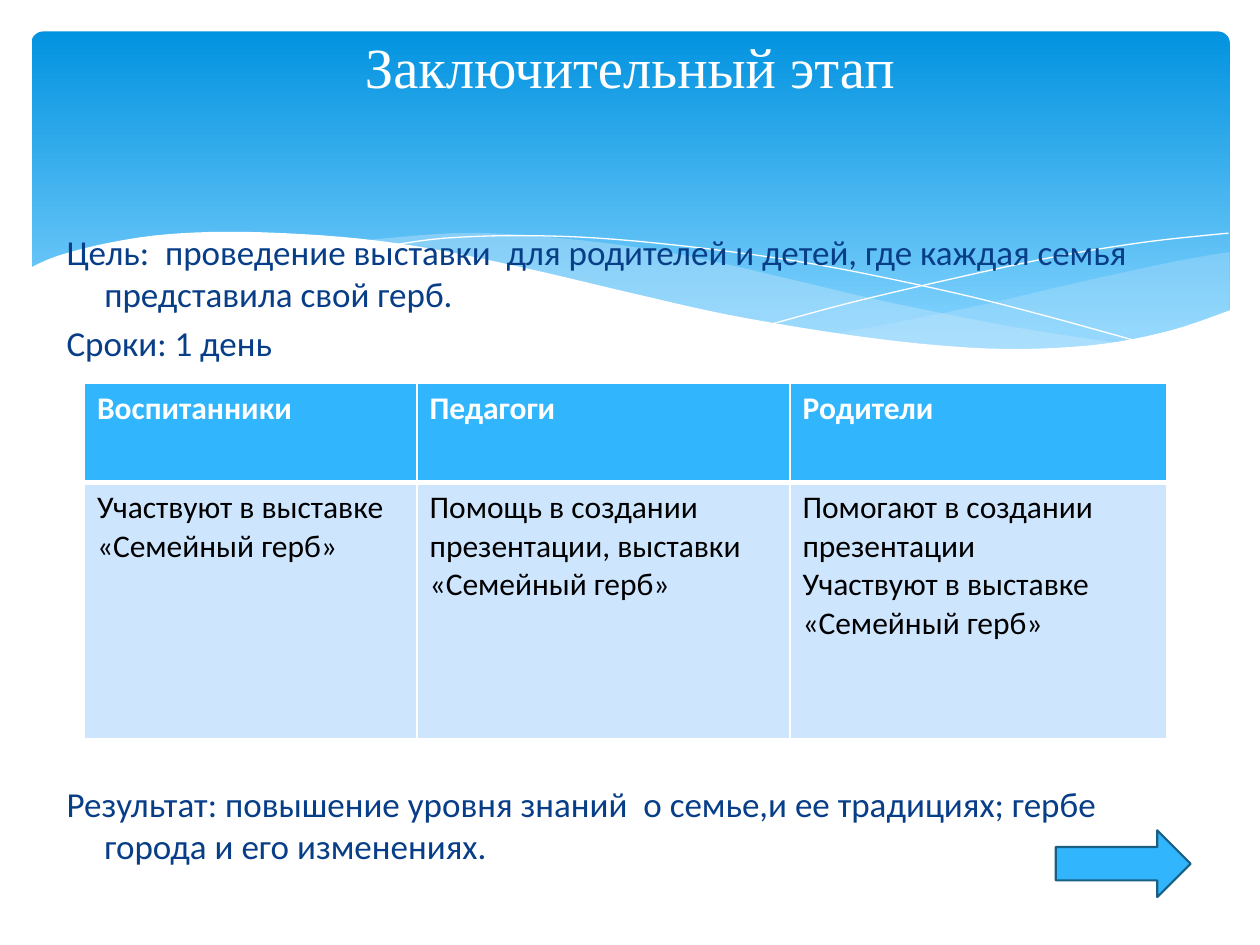
from lxml.etree import SubElement
from pptx import Presentation
from pptx.dml.color import RGBColor
from pptx.enum.shapes import MSO_SHAPE
from pptx.enum.text import MSO_ANCHOR, PP_ALIGN
from pptx.oxml.ns import qn
from pptx.util import Inches, Pt

COLORS = {
    "white": "FFFFFF", "black": "000000", "navy": "073E87",
    "sky_top": "0293E0", "sky_bottom": "83D3FE", "wave": "C6E7FC",
    "header": "31B6FD", "cell": "CEE5FE", "arrow_line": "195F84",
}

# Wave edges as key points, in inches
RIGHT_TOP = [(9.76, 2), (9.35, 2.07), (8.61, 2.23), (7.79, 2.42), (7.06, 2.57), (6.61, 2.65)]
RIGHT_BOTTOM = [(6.61, 2.65), (7.05, 2.71), (7.57, 2.76), (8.14, 2.78), (8.63, 2.75),
                (9.05, 2.69), (9.42, 2.59), (9.76, 2.47)]
MIDDLE_TOP = [(8.93, 2.73), (8.07, 2.6), (7.06, 2.4), (6.29, 2.22), (5.55, 2.05),
              (4.89, 1.94), (4.2, 1.87), (3.61, 1.85), (2.86, 1.91)]
MIDDLE_BOTTOM = [(2.86, 1.91), (3.62, 2.03), (4.49, 2.22), (5.3, 2.4), (6.18, 2.58),
                 (6.95, 2.7), (7.61, 2.77), (8.28, 2.78), (8.93, 2.73)]
FALLING_LINE = [(3.09, 1.95), (3.53, 1.89), (4.16, 1.87), (4.89, 1.9), (5.82, 2),
                (6.65, 2.13), (7.6, 2.33), (8.31, 2.51), (9.07, 2.72)]
RISING_LINE = [(6.13, 2.57), (6.72, 2.41), (7.48, 2.23), (8.36, 2.04), (9.1, 1.92), (9.75, 1.85)]
FRONT_EDGE = [(9.77, 2.46), (9.3, 2.62), (8.75, 2.73), (8.09, 2.77), (7.44, 2.74),
              (6.68, 2.65), (5.79, 2.5), (5.03, 2.33), (4.18, 2.13), (3.4, 1.97),
              (2.71, 1.88), (1.93, 1.84), (1.32, 1.86), (0.85, 1.93), (0.46, 2.03), (0.23, 2.13)]


def smooth(points, steps=5):
    """Sample a Catmull-Rom curve through the points."""
    padded = [points[0], *points, points[-1]]
    curve = []
    for a, b, c, d in zip(padded, padded[1:], padded[2:], padded[3:]):
        for i in range(steps):
            t = i / steps
            curve.append(tuple(
                (2 * q + (r - p) * t + (2 * p - 5 * q + 4 * r - s) * t ** 2
                 + (3 * q - p - 3 * r + s) * t ** 3) / 2
                for p, q, r, s in zip(a, b, c, d)))
    return curve + [points[-1]]


class SlideBuilder:
    body_font = "Calibri"
    title_font = "Times New Roman"

    def __init__(self, slide):
        self.slide = slide

    def color(self, name):
        return RGBColor.from_string(COLORS[name])

    def paint(self, sp, fill=None, line=None, width=0, alpha=None):
        sp.shadow.inherit = False
        if fill:
            sp.fill.solid()
            sp.fill.fore_color.rgb = self.color(fill)
        else:
            sp.fill.background()
        if line:
            sp.line.color.rgb = self.color(line)
            sp.line.width = Pt(width)
        else:
            sp.line.fill.background()
        if alpha:
            clr = sp.fill._xPr.find(qn("a:solidFill"))[0]
            SubElement(clr, qn("a:alpha"), val=str(alpha * 1000))

    def shape(self, kind, box, **style):
        sp = self.slide.shapes.add_shape(kind, *map(Inches, box))
        self.paint(sp, **style)
        return sp

    def gradient_panel(self, box, top, bottom):
        sp = self.shape(MSO_SHAPE.ROUNDED_RECTANGLE, box)
        sp.adjustments[0] = 0.034
        sp.fill.gradient()
        sp.fill.gradient_angle = 270
        for stop, name, position in zip(sp.fill.gradient_stops, (top, bottom), (0, 0.9)):
            stop.color.rgb = self.color(name)
            stop.position = position

    def curve(self, points, close=True, **style):
        pts = [(Inches(x), Inches(y)) for x, y in points]
        builder = self.slide.shapes.build_freeform(*pts[0])
        builder.add_line_segments(pts[1:], close=close)
        self.paint(builder.convert_to_shape(), **style)

    def font(self, p, size, color, name=None, bold=False):
        p.font.name = name or self.body_font
        p.font.size = Pt(size)
        p.font.bold = bold
        p.font.color.rgb = self.color(color)

    def text_frame(self, box):
        tf = self.slide.shapes.add_textbox(*map(Inches, box)).text_frame
        tf.word_wrap = True
        return tf

    def title(self, box, text):
        tf = self.text_frame(box)
        tf.vertical_anchor = MSO_ANCHOR.MIDDLE
        p = tf.paragraphs[0]
        p.text = text
        p.alignment = PP_ALIGN.CENTER
        self.font(p, 32.4, "white", self.title_font)

    def body(self, box, lines):
        tf = self.text_frame(box)
        for i, line in enumerate(lines):
            p = tf.add_paragraph() if i else tf.paragraphs[0]
            p.text = line
            p.space_before = Pt(4)
            self.font(p, 20, "navy")
            # Hanging indent
            pPr = p._p.get_or_add_pPr()
            pPr.set("marL", str(Inches(0.3)))
            pPr.set("indent", str(-Inches(0.3)))

    def borders(self, cell, **widths):
        tcPr = cell._tc.get_or_add_tcPr()
        for i, side in enumerate(("lnL", "lnR", "lnT", "lnB")):
            ln = tcPr.makeelement(qn("a:" + side), {"w": str(Pt(widths.get(side, 1)))})
            fill = SubElement(ln, qn("a:solidFill"))
            SubElement(fill, qn("a:srgbClr"), val=COLORS["white"])
            tcPr.insert(i, ln)

    def table(self, box, widths, heights, rows):
        table = self.slide.shapes.add_table(len(rows), len(widths), *map(Inches, box)).table
        for column, width in zip(table.columns, widths):
            column.width = Inches(width)
        for r, (height, texts) in enumerate(zip(heights, rows)):
            table.rows[r].height = Inches(height)
            header = r == 0
            for c, text in enumerate(texts):
                cell = table.cell(r, c)
                cell.text = text
                cell.fill.solid()
                cell.fill.fore_color.rgb = self.color("header" if header else "cell")
                for p in cell.text_frame.paragraphs:
                    self.font(p, 18, "white" if header else "black", bold=header)
                self.borders(cell, **({"lnB": 3} if header else {"lnT": 3}))


def main():
    prs = Presentation()
    prs.slide_width, prs.slide_height = Inches(10), Inches(7.5)
    s = SlideBuilder(prs.slides.add_slide(prs.slide_layouts[6]))

    # Sky panel with waves
    s.gradient_panel((0.25, 0.25, 9.51, 2.7), "sky_top", "sky_bottom")
    s.curve(smooth(RIGHT_TOP) + smooth(RIGHT_BOTTOM), fill="wave", alpha=29)
    s.curve(smooth(MIDDLE_TOP) + smooth(MIDDLE_BOTTOM), fill="wave", alpha=40)
    for line in (FALLING_LINE, RISING_LINE):
        s.curve(smooth(line), close=False, line="white")
    s.curve(smooth(FRONT_EDGE) + [(0.23, 3.29), (9.77, 3.29)], fill="white")

    # Title and text
    s.title((0.5, 0.2, 9, 0.65), "Заключительный этап")
    s.body((0.43, 1.78, 9, 1.2), [
        "Цель:  проведение выставки  для родителей и детей, где каждая семья представила свой герб.",
        "Сроки: 1 день",
    ])
    s.body((0.43, 6.16, 9, 0.85), [
        "Результат: повышение уровня знаний  о семье,и ее традициях; гербе города и его изменениях.",
    ])

    # Participants
    s.table((0.67, 3.04, 8.58, 2.83), (2.64, 2.96, 2.99), (0.79, 2.03), [
        ("Воспитанники", "Педагоги", "Родители"),
        ("Участвуют в выставке «Семейный герб»",
         "Помощь в создании презентации, выставки  «Семейный герб»",
         "Помогают в создании презентации\nУчаствуют в выставке «Семейный герб»"),
    ])

    # Forward arrow
    s.shape(MSO_SHAPE.RIGHT_ARROW, (8.38, 6.59, 1.07, 0.53),
            fill="header", line="arrow_line", width=1.25)

    prs.save("out.pptx")


if __name__ == "__main__":
    main()
